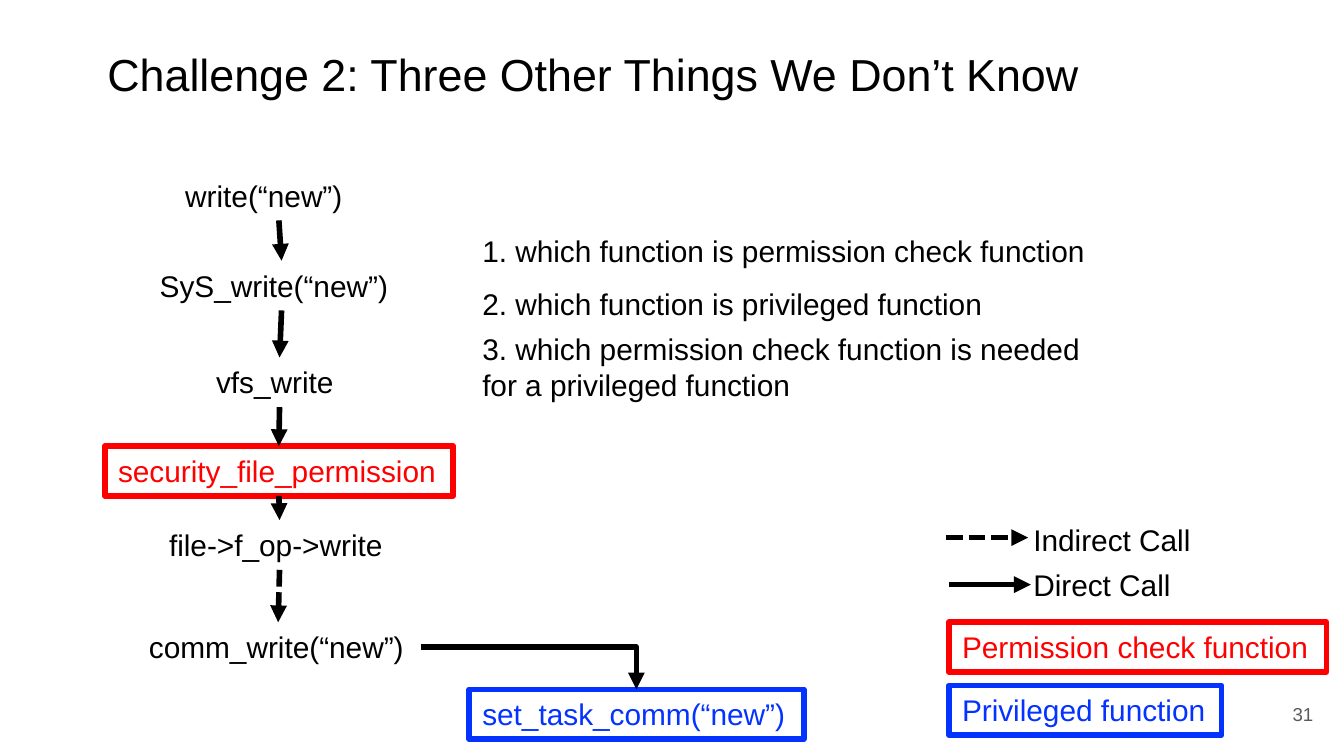
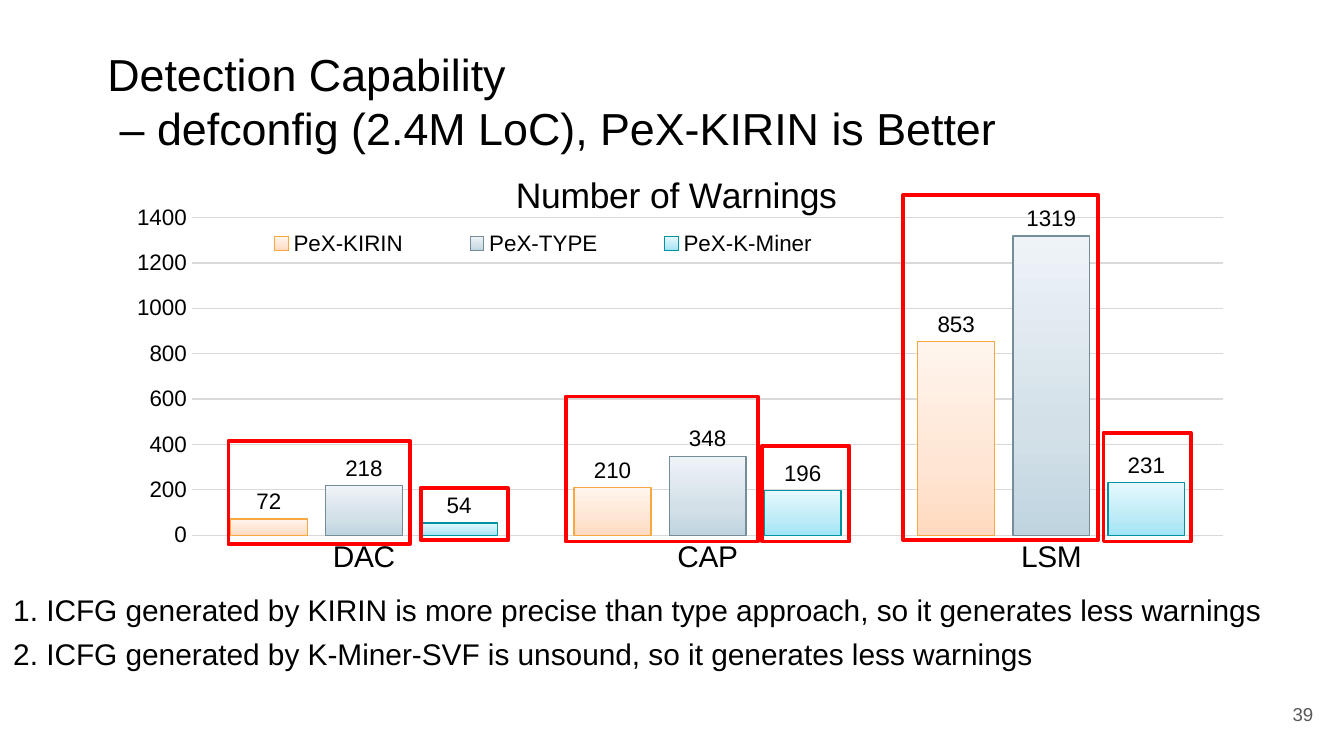
from dataclasses import dataclass

from lxml import etree
from pptx import Presentation
from pptx.chart.data import CategoryChartData
from pptx.dml.color import RGBColor
from pptx.enum.chart import XL_CHART_TYPE, XL_LABEL_POSITION, XL_LEGEND_POSITION, XL_TICK_MARK
from pptx.enum.dml import MSO_LINE
from pptx.enum.shapes import MSO_CONNECTOR, MSO_SHAPE
from pptx.enum.text import MSO_ANCHOR, MSO_AUTO_SIZE, PP_ALIGN
from pptx.oxml import parse_xml
from pptx.oxml.ns import nsdecls, qn
from pptx.util import Pt

PX = 9144  # 100 px to the inch
SLIDE_WIDTH = 1000
LEFT, RIGHT = PP_ALIGN.LEFT, PP_ALIGN.RIGHT
TOP_ANCHOR, MIDDLE_ANCHOR = MSO_ANCHOR.TOP, MSO_ANCHOR.MIDDLE
FIT_SHAPE, NO_FIT = MSO_AUTO_SIZE.SHAPE_TO_FIT_TEXT, MSO_AUTO_SIZE.NONE
STRAIGHT, ELBOW = MSO_CONNECTOR.STRAIGHT, MSO_CONNECTOR.ELBOW
RECTANGLE = MSO_SHAPE.RECTANGLE
DASH = MSO_LINE.SQUARE_DOT
NO_TICK = XL_TICK_MARK.NONE
CLUSTERED = XL_CHART_TYPE.COLUMN_CLUSTERED
OUTSIDE_END = XL_LABEL_POSITION.OUTSIDE_END
LEGEND_BOTTOM = XL_LEGEND_POSITION.BOTTOM
TOP_SIDE, BOTTOM_SIDE, RIGHT_SIDE = 0, 2, 3
BLANK_LAYOUT = 6
LINE_HEIGHT = 37


@dataclass(frozen=True)
class Theme:
    font: str = "Arial"
    text: str = "000000"
    muted: str = "595959"
    permission: str = "FF0000"
    privileged: str = "0432FF"
    grid: str = "D9D9D9"
    title_size: int = 24
    chart_title_size: int = 19
    body_size: int = 16
    chart_size: int = 12
    number_size: int = 10
    flow_line: float = 3
    highlight_line: float = 2
    chart_line: float = 0.75


THEME = Theme()

# Series name, values, outline, gradient stops from the foot of the bar upwards
WARNING_SERIES = (
    ("PeX-KIRIN", (72, 210, 853), "F9A73F", ("FFDAC0", "FFE5D3", "FFF5EE")),
    ("PeX-TYPE", (218, 348, 1319), "758D99", ("C0D4E0", "D3E0E8", "EEF3F7")),
    ("PeX-K-Miner", (54, 196, 231), "0094A3", ("A0E5F5", "BEEBF7", "E5F8FD")),
)
GRADIENT_POSITIONS = (0, 35, 100)


def px(*lengths):
    return [length * PX for length in lengths]


def style_font(font, size, color=THEME.text):
    font.name = THEME.font
    font.size = Pt(size)
    font.bold = False
    font.color.rgb = RGBColor.from_string(color)


def style_line(line, color, width):
    line.color.rgb = RGBColor.from_string(color)
    line.width = Pt(width)


def write_text(shape, text, size, color, wrap=False, align=LEFT):
    frame = shape.text_frame
    frame.text = text
    frame.word_wrap = wrap
    frame.vertical_anchor = TOP_ANCHOR
    frame.auto_size = FIT_SHAPE
    for paragraph in frame.paragraphs:
        paragraph.alignment = align
        for run in paragraph.runs:
            style_font(run.font, size, color)
    return shape


def add_label(slide, text, left, top, width, height=LINE_HEIGHT, wrap=False, size=THEME.body_size):
    box = slide.shapes.add_textbox(*px(left, top, width, height))
    return write_text(box, text, size, THEME.text, wrap)


def add_outline(slide, left, top, width, height, color, line_width):
    shape = slide.shapes.add_shape(RECTANGLE, *px(left, top, width, height))
    shape.shadow.inherit = False
    shape.fill.background()
    style_line(shape.line, color, line_width)
    etree.SubElement(shape.line._get_or_add_ln(), qn("a:round"))
    return shape


def add_function_box(slide, text, left, top, width, color):
    shape = add_outline(slide, left, top, width, LINE_HEIGHT, color, THEME.flow_line)
    return write_text(shape, text, THEME.body_size, color)


def add_arrow(slide, start=(0, 0), end=(0, 0), dashed=False, kind=STRAIGHT):
    arrow = slide.shapes.add_connector(kind, *px(*start, *end))
    style_line(arrow.line, THEME.text, THEME.flow_line)
    if dashed:
        arrow.line.dash_style = DASH
    line = arrow.line._get_or_add_ln()
    etree.SubElement(line, qn("a:round"))
    etree.SubElement(line, qn("a:tailEnd"), type="triangle")
    etree.SubElement(arrow._element.spPr, qn("a:effectLst"))
    return arrow


def join(arrow, source, source_side, target, target_side):
    arrow.begin_connect(source, source_side)
    arrow.end_connect(target, target_side)


def add_base_slide(presentation, title, title_width, title_height, number):
    """Add a blank slide with the shared title and page number."""
    slide = presentation.slides.add_slide(presentation.slide_layouts[BLANK_LAYOUT])
    add_label(slide, title, 70, 30, title_width, title_height, size=THEME.title_size)
    box = slide.shapes.add_textbox(*px(927, 510, 60, 43))
    write_text(box, number, THEME.number_size, THEME.muted, wrap=True, align=RIGHT)
    frame = box.text_frame
    frame.auto_size = NO_FIT
    frame.vertical_anchor = MIDDLE_ANCHOR
    frame.margin_top = frame.margin_bottom = 10 * PX
    return slide


def manual_layout(x, y, width=None, height=None, inner=False):
    """Return a c:layout element placed by fractions of the chart."""
    target = '<c:layoutTarget val="inner"/>' if inner else ""
    sizes = "" if width is None else f'<c:w val="{width}"/><c:h val="{height}"/>'
    return parse_xml(
        f'<c:layout {nsdecls("c")}><c:manualLayout>{target}'
        f'<c:xMode val="edge"/><c:yMode val="edge"/>'
        f'<c:x val="{x}"/><c:y val="{y}"/>{sizes}</c:manualLayout></c:layout>'
    )


def place(element, layout, predecessor=None):
    """Put the layout in a chart part, after predecessor or else first."""
    for old in element.findall(qn("c:layout")):
        element.remove(old)
    if predecessor is None:
        element.insert(0, layout)
    else:
        element.find(qn(predecessor)).addnext(layout)


def fill_gradient(series, colors):
    stops = "".join(
        f'<a:gs pos="{position * 1000}"><a:srgbClr val="{color}"/></a:gs>'
        for position, color in zip(GRADIENT_POSITIONS, colors)
    )
    gradient = parse_xml(
        f'<a:gradFill {nsdecls("a")} rotWithShape="1"><a:gsLst>{stops}</a:gsLst>'
        f'<a:lin ang="16200000" scaled="0"/></a:gradFill>'
    )
    series.format.fill.background()
    properties = series._element.spPr
    properties.replace(properties.find(qn("a:noFill")), gradient)


def style_axes(chart):
    category, value = chart.category_axis, chart.value_axis
    for axis, size in ((category, THEME.body_size), (value, THEME.chart_size)):
        axis.major_tick_mark = axis.minor_tick_mark = NO_TICK
        style_font(axis.tick_labels.font, size)
    style_line(category.format.line, THEME.grid, THEME.chart_line)
    value.format.line.fill.background()
    value.has_major_gridlines = True
    style_line(value.major_gridlines.format.line, THEME.grid, THEME.chart_line)
    value.minimum_scale, value.maximum_scale, value.major_unit = 0, 1400, 200


def style_bars(chart):
    plot = chart.plots[0]
    plot.vary_by_categories = False
    plot.gap_width = 100
    plot.overlap = -24
    for series, (_, _, outline, colors) in zip(plot.series, WARNING_SERIES):
        series.invert_if_negative = False
        fill_gradient(series, colors)
        style_line(series.format.line, outline, THEME.chart_line)
        labels = series.data_labels
        labels.show_value = True
        labels.position = OUTSIDE_END
        style_font(labels.font, THEME.chart_size)


def add_warning_chart(slide):
    data = CategoryChartData()
    data.categories = ("DAC", "CAP", "LSM")
    for name, values, _, _ in WARNING_SERIES:
        data.add_series(name, values)
    chart = slide.shapes.add_chart(CLUSTERED, *px(84, 110, 843, 324), data).chart
    style_font(chart.font, THEME.number_size)
    style_axes(chart)
    style_bars(chart)

    chart.has_title = True
    title = chart.chart_title
    title.text_frame.text = "Number of Warnings"
    style_font(title.text_frame.paragraphs[0].runs[0].font, THEME.chart_title_size)
    title.include_in_layout = False
    place(title._element, manual_layout(0.35, 0.04), "c:tx")

    chart.has_legend = True
    legend = chart.legend
    legend.position = LEGEND_BOTTOM
    legend.include_in_layout = False
    style_font(legend.font, THEME.chart_size)
    place(legend._element, manual_layout(0.09, 0.18, 0.58, 0.08), "c:legendPos")

    plot_area = chart._chartSpace.chart.plotArea
    place(plot_area, manual_layout(0.07, 0.16, 0.91, 0.73, inner=True))


def add_call_chain(slide):
    write = add_label(slide, "write(“new”)", 128, 127, 159, wrap=True)
    sys_write = add_label(slide, "SyS_write(“new”)", 109, 194, 201, wrap=True)
    vfs_write = add_label(slide, "vfs_write", 151, 266, 114, wrap=True)
    check = add_function_box(slide, "security_file_permission", 78, 332, 259, THEME.permission)
    file_write = add_label(slide, "file->f_op->write", 116, 387, 184, wrap=True)
    comm_write = add_label(slide, "comm_write(“new”)", 101, 463, 212)
    set_comm = add_function_box(slide, "set_task_comm(“new”)", 349, 513, 249, THEME.privileged)

    chain = (write, sys_write, vfs_write, check, file_write, comm_write)
    for caller, callee in zip(chain, chain[1:]):
        arrow = add_arrow(slide, dashed=callee is comm_write)
        join(arrow, caller, BOTTOM_SIDE, callee, TOP_SIDE)
    corner = add_arrow(slide, kind=ELBOW)
    corner._element.spPr.find(qn("a:prstGeom")).set("prst", "bentConnector2")
    join(corner, comm_write, RIGHT_SIDE, set_comm, TOP_SIDE)


def add_call_legend(slide):
    add_arrow(slide, (704, 400), (765, 400), dashed=True)
    add_label(slide, "Indirect Call", 759, 383, 139)
    add_arrow(slide, (706, 435), (767, 435))
    add_label(slide, "Direct Call", 759, 417, 123)
    add_function_box(slide, "Permission check function", 706, 463, 281, THEME.permission)
    add_function_box(slide, "Privileged function", 706, 510, 203, THEME.privileged)


def build_challenge_slide(presentation):
    title = "Challenge 2: Three Other Things We Don’t Know"
    slide = add_base_slide(presentation, title, 752, 50, "31")
    add_call_chain(slide)
    add_call_legend(slide)
    add_label(slide, "1. which function is permission check function", 349, 168, 474)
    add_label(slide, "2. which function is privileged function", 349, 208, 397)
    question = "3. which permission check function is needed for a privileged function"
    add_label(slide, question, 349, 241, 474, 64, wrap=True)


def add_highlights(slide):
    """Frame the KIRIN and TYPE pair, then the K-Miner bar, of each category."""
    pairs = ((328, 135, 77), (295, 143, 108), (145, 145, 257))
    singles = ((363, 39), (332, 71), (322, 81))
    for index, (pair, single) in enumerate(zip(pairs, singles)):
        pair_top, pair_width, pair_height = pair
        single_top, single_height = single
        for box in (
            (170 + 251 * index, pair_top, pair_width, pair_height),
            (313 + 254 * index, single_top, 65, single_height),
        ):
            add_outline(slide, *box, THEME.permission, THEME.highlight_line)


def build_detection_slide(presentation):
    title = "Detection Capability\n – defconfig (2.4M LoC), PeX-KIRIN is Better"
    slide = add_base_slide(presentation, title, 688, 91, "39")
    add_warning_chart(slide)
    findings = (
        ("1. ICFG generated by KIRIN is more precise than type approach, "
         "so it generates less warnings", 961),
        ("2. ICFG generated by K-Miner-SVF is unsound, so it generates less warnings", 789),
    )
    for index, (finding, width) in enumerate(findings):
        add_label(slide, finding, 0, 435 + 33 * index, width)
    add_highlights(slide)


def main():
    presentation = Presentation()
    presentation.slide_width = SLIDE_WIDTH * PX
    presentation.slide_height = SLIDE_WIDTH * PX * 9 // 16
    build_challenge_slide(presentation)
    build_detection_slide(presentation)
    presentation.save("out.pptx")


if __name__ == "__main__":
    main()
